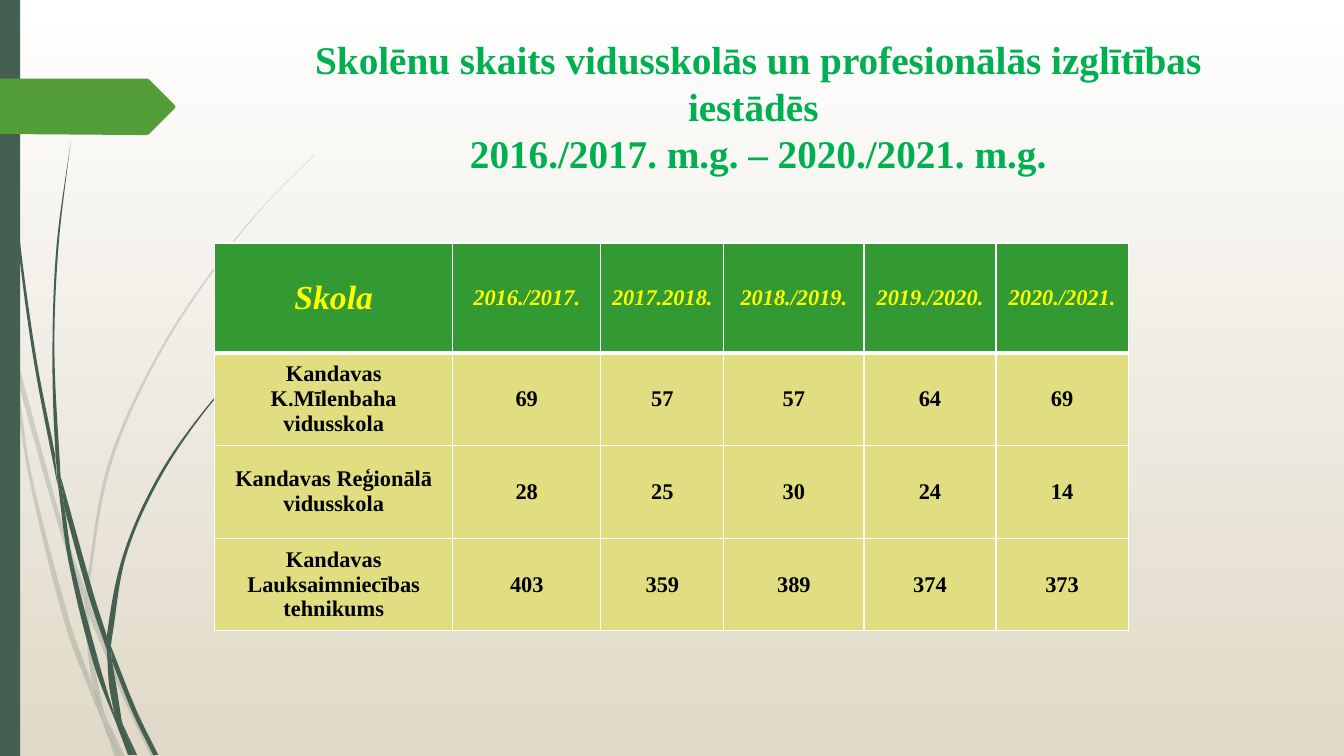
from dataclasses import dataclass
from math import dist

from lxml.etree import SubElement
from pptx import Presentation
from pptx.dml.color import RGBColor
from pptx.enum.shapes import MSO_SHAPE
from pptx.enum.text import MSO_ANCHOR, PP_ALIGN
from pptx.oxml import parse_xml
from pptx.oxml.ns import nsdecls, qn
from pptx.util import Pt

PX = 9144  # EMU per px, 100 px to the inch


@dataclass(frozen=True)
class Theme:
    font: str = "Times New Roman"
    sky: str = "FFFFFF"
    sand: str = "E0D9C8"
    stem: str = "455F51"
    arrow: str = "549E39"
    title: str = "00B050"
    head_fill: str = "339933"
    head_text: str = "FFFF00"
    body_fill: str = "E0DE80"
    body_text: str = "000000"
    grid: str = "FFFFFF"
    title_size: int = 28
    title_pitch: float = 33.5
    school_size: int = 24
    cell_size: int = 16


T = Theme()

# Each blade of grass has two smooth edges: one out, one back
PALE_GRASS = [
    ([(11, 350), (9, 322), (0, 282)], [(0, 299), (10, 344), (11, 350)]),
    ([(17, 376), (58, 522), (84, 599)], [(85, 586), (62, 520), (14, 345)]),
    ([(88, 610), (123, 694), (150, 751)], [(155, 751), (127, 692), (92, 607), (88, 596)]),
    ([(105, 711), (119, 751)], [(124, 751), (105, 711)]),
    ([(11, 350), (28, 470), (65, 621), (92, 693), (101, 714)],
     [(99, 707), (93, 683), (70, 619), (31, 469), (17, 376), (11, 350)]),
    ([(84, 599), (87, 646), (93, 683), (105, 711)], [(103, 706), (91, 646), (88, 610), (84, 599)]),
    ([(88, 596), (88, 584), (110, 462), (160, 349), (229, 245), (268, 198), (312, 154)],
     [(312, 153), (268, 197), (228, 244), (158, 348), (107, 461), (85, 584), (85, 586)]),
    ([(101, 714), (114, 751)], [(119, 751), (101, 714)]),
    ([(88, 610), (88, 596)], [(85, 586), (84, 599)]),
    ([(93, 683), (101, 714), (119, 751)], [(119, 751), (105, 711), (93, 683)]),
]
DARK_GRASS = [
    ([(3, 0), (7, 110), (17, 233), (33, 355), (57, 481)],
     [(55, 457), (55, 453), (36, 355), (19, 232), (8, 109), (4, 0)]),
    ([(64, 505), (88, 592), (106, 645)], [(106, 633), (106, 631), (93, 590), (60, 472)]),
    ([(111, 656), (132, 708), (152, 749)], [(157, 749), (136, 706), (110, 641)]),
    ([(57, 477), (68, 557), (93, 659), (117, 722)],
     [(116, 717), (98, 657), (72, 556), (64, 505), (57, 477)]),
    ([(60, 472), (54, 349), (58, 245), (70, 141)], [(70, 141), (56, 245), (52, 349), (55, 449), (60, 472)]),
    ([(122, 719), (133, 749)], [(136, 749), (122, 719)]),
    ([(57, 477), (64, 505)], [(60, 472), (55, 449)]),
    ([(111, 633), (125, 552), (158, 476), (205, 406), (261, 344)],
     [(260, 344), (204, 405), (156, 474), (122, 551), (106, 631), (110, 641)]),
    ([(117, 722), (127, 749)], [(131, 749), (117, 722)]),
    ([(106, 645), (110, 691), (122, 719)], [(121, 716), (111, 656), (106, 645)]),
    ([(106, 645), (111, 656)], [(110, 641), (106, 631)]),
    ([(110, 691), (117, 722), (130, 749)], [(133, 749), (122, 719), (110, 691)]),
]
ARROW = [(0, 78), (146, 78), (148, 79), (173, 104), (174, 106), (173, 108),
         (148, 133), (146, 134), (136, 134), (0, 133)]

TITLE = ("Skolēnu skaits vidusskolās un profesionālās izglītības iestādēs \v"
         "2016./2017. m.g. – 2020./2021. m.g.")
COLUMNS = [236, 147, 122, 139, 131, 131]
ROW_HEIGHTS = [109, 92, 92, 92]
PUPILS = [
    ["Skola", "2016./2017.", "2017.2018.", "2018./2019.", "2019./2020.", "2020./2021."],
    ["Kandavas K.Mīlenbaha vidusskola", "69", "57", "57", "64", "69"],
    ["Kandavas Reģionālā vidusskola", "28", "25", "30", "24", "14"],
    ["Kandavas Lauksaimniecības tehnikums", "403", "359", "389", "374", "373"],
]


def px(*lengths):
    return [round(n * PX) for n in lengths]


def paint(sp, color):
    sp.shadow.inherit = False
    sp.fill.solid()
    sp.fill.fore_color.rgb = RGBColor.from_string(color)
    sp.line.fill.background()


def smooth(knots):
    """Segments through the knots: Bézier triples, or one point when straight."""
    if len(knots) == 2:
        return [knots[1:]]
    slopes = []
    for a, b in zip(knots[:1] + knots[:-1], knots[1:] + knots[-1:]):
        d = dist(a, b) or 1
        slopes.append(((b[0] - a[0]) / d, (b[1] - a[1]) / d))
    segments = []
    for a, b, (ax, ay), (bx, by) in zip(knots, knots[1:], slopes, slopes[1:]):
        reach = dist(a, b) / 3
        segments.append([(a[0] + ax * reach, a[1] + ay * reach),
                         (b[0] - bx * reach, b[1] - by * reach), b])
    return segments


def add_outline(s, start, segments, color):
    builder = s.shapes.build_freeform(*px(*start), scale=1.0)
    builder.add_line_segments([px(*point) for seg in segments for point in seg], close=True)
    sp = builder.convert_to_shape()
    paint(sp, color)
    # Turn each triple of line ends into one curve
    path = next(sp._element.iter(qn("a:path")))
    lines = iter(path.findall(qn("a:lnTo")))
    for seg in segments:
        first, *others = [next(lines) for _ in seg]
        if others:
            first.tag = qn("a:cubicBezTo")
        for line in others:
            first.append(line[0])
            path.remove(line)
    return sp


def add_grass(s, blades, opacity=100):
    shapes = [add_outline(s, out[0], smooth(out) + [back[:1]] + smooth(back), T.stem)
              for out, back in blades]
    if opacity < 100:
        for sp in shapes:
            color = sp._element.spPr.find(qn("a:solidFill"))[0]
            SubElement(color, qn("a:alpha"), val=str(opacity * 1000))
    s.shapes.add_group_shape(shapes)


def style_text(p, size, color, italic=False):
    p.alignment = PP_ALIGN.CENTER
    for r in p.runs:
        r.font.name, r.font.size = T.font, Pt(size)
        r.font.bold, r.font.italic = True, italic
        r.font.color.rgb = RGBColor.from_string(color)


def add_title(s):
    tf = s.shapes.add_textbox(*px(245, 30, 1014, 140)).text_frame
    tf.word_wrap = True
    tf.vertical_anchor = MSO_ANCHOR.TOP
    tf.text = TITLE
    p = tf.paragraphs[0]
    style_text(p, T.title_size, T.title)
    p.line_spacing = Pt(T.title_pitch)


def set_borders(cell, **widths):
    for i, side in enumerate("LRTB"):
        width = Pt(widths.get(side, 1))
        cell._tc.get_or_add_tcPr().insert(i, parse_xml(
            f'<a:ln{side} {nsdecls("a")} w="{width}"><a:solidFill>'
            f'<a:srgbClr val="{T.grid}"/></a:solidFill></a:ln{side}>'))


def add_pupil_table(s):
    frame = s.shapes.add_table(len(PUPILS), len(COLUMNS),
                               *px(213, 241, sum(COLUMNS), sum(ROW_HEIGHTS)))
    table = frame.table
    for column, width in zip(table.columns, COLUMNS):
        column.width = width * PX
    for i, (row, height) in enumerate(zip(table.rows, ROW_HEIGHTS)):
        row.height = height * PX
        head = i == 0
        for j, cell in enumerate(row.cells):
            cell.text = PUPILS[i][j]
            cell.vertical_anchor = MSO_ANCHOR.MIDDLE
            size = T.school_size if head and j == 0 else T.cell_size
            style_text(cell.text_frame.paragraphs[0], size,
                       T.head_text if head else T.body_text, italic=head)
            cell.fill.solid()
            cell.fill.fore_color.rgb = RGBColor.from_string(T.head_fill if head else T.body_fill)
            set_borders(cell, B=3 if head else 1, T=3 if i == 1 else 1)


def add_background(s):
    fill = s.background.fill
    fill.gradient()
    fill.gradient_angle = 270
    for stop, color in zip(fill.gradient_stops, (T.sky, T.sand)):
        stop.color.rgb = RGBColor.from_string(color)


def main():
    prs = Presentation()
    prs.slide_width, prs.slide_height = px(1333, 750)
    s = prs.slides.add_slide(prs.slide_layouts[6])
    # Backdrop
    add_background(s)
    add_grass(s, PALE_GRASS, opacity=20)
    add_grass(s, DARK_GRASS)
    paint(s.shapes.add_shape(MSO_SHAPE.RECTANGLE, *px(0, 0, 20, 750)), T.stem)
    add_outline(s, ARROW[0], [[point] for point in ARROW[1:]], T.arrow)
    # Content
    add_title(s)
    add_pupil_table(s)
    prs.save("out.pptx")


if __name__ == "__main__":
    main()
